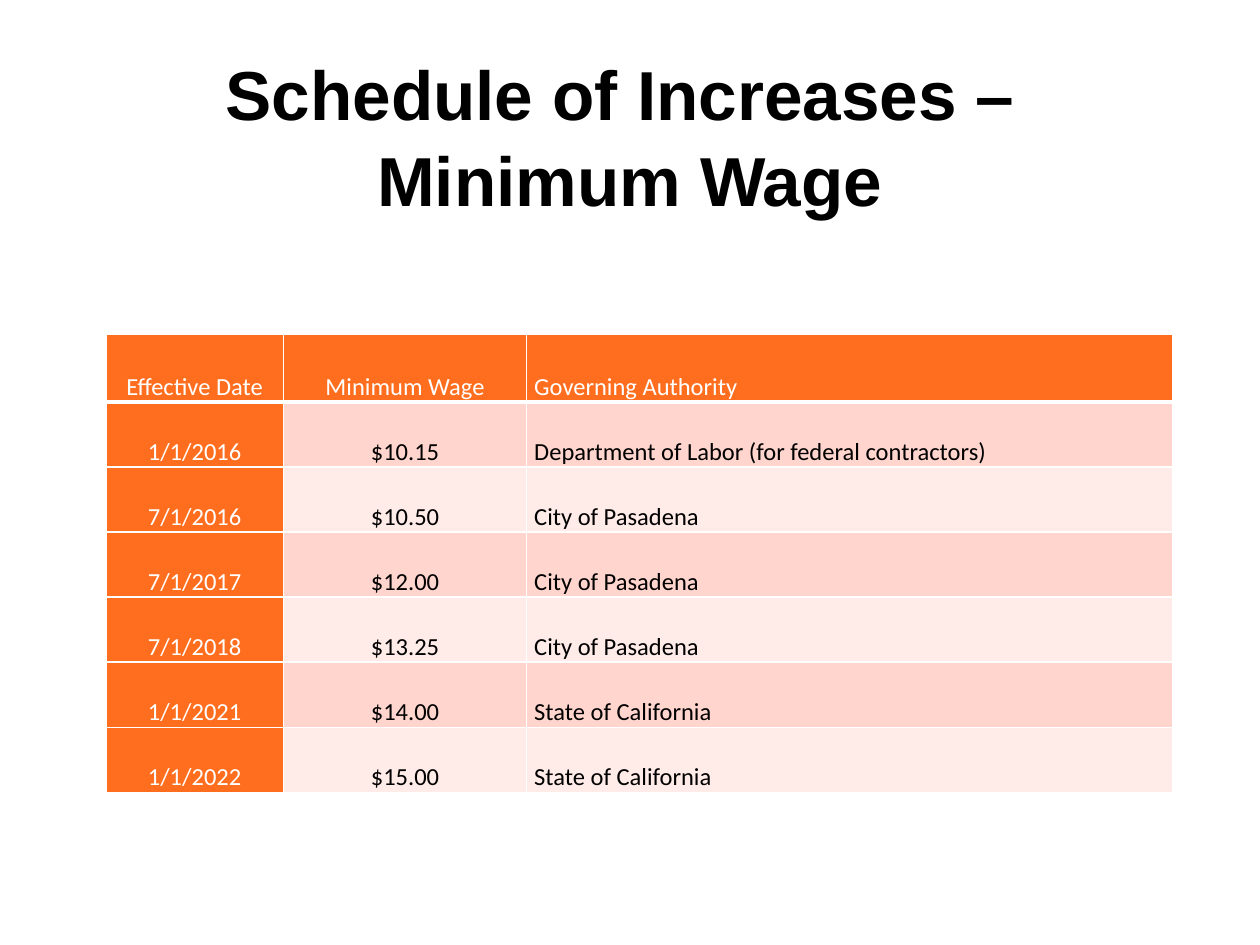
from dataclasses import dataclass

from lxml.etree import SubElement
from pptx import Presentation
from pptx.dml.color import RGBColor
from pptx.enum.text import MSO_ANCHOR, MSO_AUTO_SIZE, PP_ALIGN
from pptx.oxml.ns import qn
from pptx.util import Inches, Pt

ORANGE, WHITE, BLACK = "FF6E1E", "FFFFFF", "000000"
BANDS = ("FFD5CD", "FFEBE8")

HEADINGS = ("Effective Date", "Minimum Wage", "Governing Authority")
INCREASES = (
    ("1/1/2016", "$10.15", "Department of Labor (for federal contractors)"),
    ("7/1/2016", "$10.50", "City of Pasadena"),
    ("7/1/2017", "$12.00", "City of Pasadena"),
    ("7/1/2018", "$13.25", "City of Pasadena"),
    ("1/1/2021", "$14.00", "State of California"),
    ("1/1/2022", "$15.00", "State of California"),
)
COLUMN_WIDTHS = (1.41, 1.93, 5.13)
COLUMN_ALIGNMENTS = (PP_ALIGN.CENTER, PP_ALIGN.CENTER, PP_ALIGN.LEFT)
TABLE_HEIGHT, HEADER_HEIGHT = 3.64, 0.54


@dataclass(frozen=True)
class CellStyle:
    fill: str
    color: str
    alignment: PP_ALIGN
    bottom_border: float = 1


def rgb(value: str) -> RGBColor:
    return RGBColor.from_string(value)


def add_run(paragraph, text: str, font_name: str, size: float, color: str, bold: bool = False) -> None:
    run = paragraph.add_run()
    run.text = text
    run.font.name = font_name
    run.font.size = Pt(size)
    run.font.bold = bold
    run.font.color.rgb = rgb(color)


def set_borders(cell, bottom_width: float) -> None:
    properties = cell._tc.get_or_add_tcPr()
    for side in ("lnL", "lnR", "lnT", "lnB"):
        width = bottom_width if side == "lnB" else 1
        line = SubElement(properties, qn(f"a:{side}"), w=str(Pt(width)))
        fill = SubElement(line, qn("a:solidFill"))
        SubElement(fill, qn("a:srgbClr"), val=WHITE)


def style_for(row: int, column: int) -> CellStyle:
    alignment = COLUMN_ALIGNMENTS[column]
    if row == 0:
        return CellStyle(ORANGE, WHITE, alignment, bottom_border=3)
    if column == 0:
        return CellStyle(ORANGE, WHITE, alignment)
    return CellStyle(BANDS[(row - 1) % 2], BLACK, alignment)


def fill_cell(cell, text: str, style: CellStyle) -> None:
    set_borders(cell, style.bottom_border)
    cell.fill.solid()
    cell.fill.fore_color.rgb = rgb(style.fill)
    cell.vertical_anchor = MSO_ANCHOR.BOTTOM
    cell.margin_left = cell.margin_right = Inches(0.06)
    cell.margin_top = cell.margin_bottom = 0
    paragraph = cell.text_frame.paragraphs[0]
    paragraph.alignment = style.alignment
    paragraph.line_spacing = 1.07
    add_run(paragraph, text, "Calibri", 14, style.color)


def add_title(slide, width: int, height: int) -> None:
    title = slide.shapes.title
    title.left, title.top = int(width * 0.05), int(height * 0.04)
    title.width, title.height = int(width * 0.9), int(height * 0.23)
    frame = title.text_frame
    frame.word_wrap = True
    frame.auto_size = MSO_AUTO_SIZE.NONE
    frame.vertical_anchor = MSO_ANCHOR.TOP
    frame.margin_top = Inches(0.08)
    paragraph = frame.paragraphs[0]
    paragraph.alignment = PP_ALIGN.CENTER
    paragraph.line_spacing = 1.04
    for line in ("Schedule of Increases – ", "Minimum Wage"):
        add_run(paragraph, line, "Arial", 39.6, BLACK, bold=True)
        paragraph.add_line_break()


def add_wage_table(slide) -> None:
    rows = (HEADINGS, *INCREASES)
    table = slide.shapes.add_table(
        len(rows), len(HEADINGS), Inches(0.84), Inches(2.65),
        Inches(sum(COLUMN_WIDTHS)), Inches(TABLE_HEIGHT),
    ).table
    for column, width in zip(table.columns, COLUMN_WIDTHS):
        column.width = Inches(width)
    body_height = (TABLE_HEIGHT - HEADER_HEIGHT) / len(INCREASES)
    for row, texts in enumerate(rows):
        table.rows[row].height = Inches(body_height if row else HEADER_HEIGHT)
        for column, text in enumerate(texts):
            fill_cell(table.cell(row, column), text, style_for(row, column))


def main() -> None:
    presentation = Presentation()
    presentation.slide_width, presentation.slide_height = Inches(10), Inches(7.5)
    slide = presentation.slides.add_slide(presentation.slide_layouts[5])
    # Heading
    add_title(slide, presentation.slide_width, presentation.slide_height)
    # Schedule of wages
    add_wage_table(slide)
    presentation.save("out.pptx")


if __name__ == "__main__":
    main()
